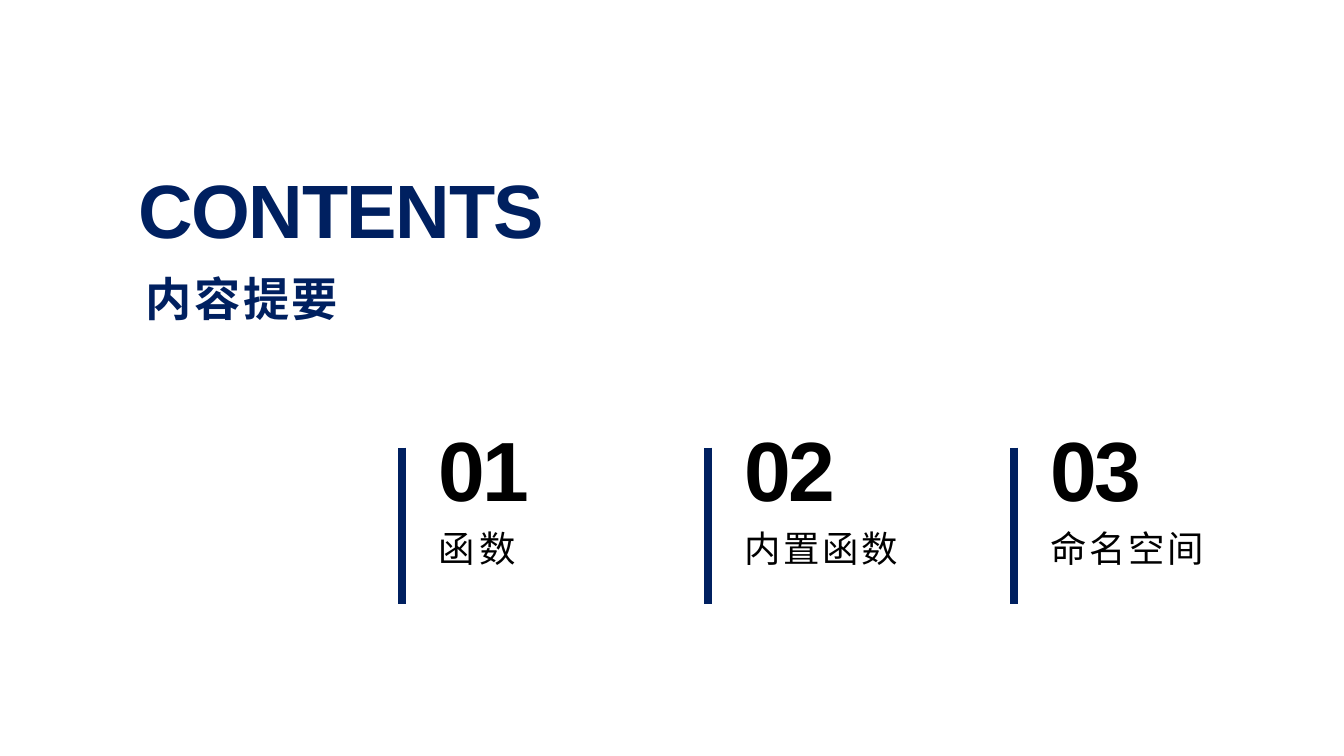
import pptx
import pptx.dml.color
import pptx.enum.shapes
import pptx.enum.text
import pptx.oxml
import pptx.oxml.ns
import pptx.util
from pptx.util import Inches

COLORS = {"navy": "002060", "black": "000000"}
LATIN, CJK = "Arial", "Noto Sans CJK SC"
TOPICS = ["函数", "内置函数", "命名空间"]
ANCHOR = pptx.enum.text.MSO_ANCHOR


def rgb(name):
    return pptx.dml.color.RGBColor.from_string(COLORS[name])


def write(sp, text, size, color, spacing, font=LATIN, bold=False,
          anchor=ANCHOR.TOP, top=0, bottom=0, line=None, after=0):
    """Fill a text shape with one left-aligned paragraph; spacing is in points."""
    tf = sp.text_frame
    tf.word_wrap = True
    tf.auto_size = pptx.enum.text.MSO_AUTO_SIZE.NONE
    tf.vertical_anchor = anchor
    tf.margin_left = tf.margin_right = Inches(0.1)
    tf.margin_top, tf.margin_bottom = Inches(top), Inches(bottom)
    p = tf.paragraphs[0]
    p.alignment = pptx.enum.text.PP_ALIGN.LEFT
    p.line_spacing = line
    p.space_before, p.space_after = pptx.util.Pt(0), pptx.util.Pt(after)
    p.font.name, p.font.size, p.font.bold = font, pptx.util.Pt(size), bold
    p.font.color.rgb = rgb(color)
    r = p.add_run()
    r.text = text
    props = r._r.get_or_add_rPr()
    props.set("spc", str(round(spacing * 100)))
    ea = pptx.oxml.parse_xml(
        f'<a:ea {pptx.oxml.ns.nsdecls("a")} typeface="{CJK}"/>')
    props.append(ea)


def add_text(slide, x, y, w, h, *args, **style):
    sp = slide.shapes.add_textbox(Inches(x), Inches(y), Inches(w), Inches(h))
    write(sp, *args, **style)


def add_heading(slide, x, y):
    title = slide.shapes.title
    title.left, title.top = Inches(x), Inches(y)
    title.width, title.height = Inches(5.01), Inches(1.06)
    write(title, "CONTENTS", 54, "navy", -1, bold=True,
          anchor=ANCHOR.BOTTOM, top=0.05, line=0.88)
    add_text(slide, x + 0.08, y + 1.16, 2.14, 0.9, "内容提要", 33, "navy", 1.7,
             bold=True, top=0.05, bottom=0.05)


def add_topic(slide, x, y, number, name):
    """Place a bar, a number and a topic name; y is the top of the number."""
    bar = slide.shapes.add_connector(
        pptx.enum.shapes.MSO_CONNECTOR.STRAIGHT,
        Inches(x), Inches(y + 0.27), Inches(x), Inches(y + 1.82))
    bar.line.color.rgb = rgb("navy")
    bar.line.width = pptx.util.Pt(6)
    bar._element.spPr.append(pptx.oxml.parse_xml(
        f'<a:effectLst {pptx.oxml.ns.nsdecls("a")}/>'))
    add_text(slide, x + 0.26, y, 1.75, 0.98, f"{number:02}", 60, "black", -2,
             bold=True, anchor=ANCHOR.BOTTOM, line=0.88)
    short = len(name) == 2
    add_text(slide, x + 0.26, y + 1.05, 1.75, 0.82, name, 26, "black",
             3.2 if short else 1.8, font=LATIN if short else CJK, after=8)


def main():
    prs = pptx.Presentation()
    prs.slide_width, prs.slide_height = Inches(13.33), Inches(7.5)
    slide = prs.slides.add_slide(prs.slide_layouts.get_by_name("Title Only"))
    add_heading(slide, 1.27, 1.47)
    for i, name in enumerate(TOPICS):
        add_topic(slide, 3.99 + 3.035 * i, 4.17, i + 1, name)
    prs.save("out.pptx")


if __name__ == "__main__":
    main()
